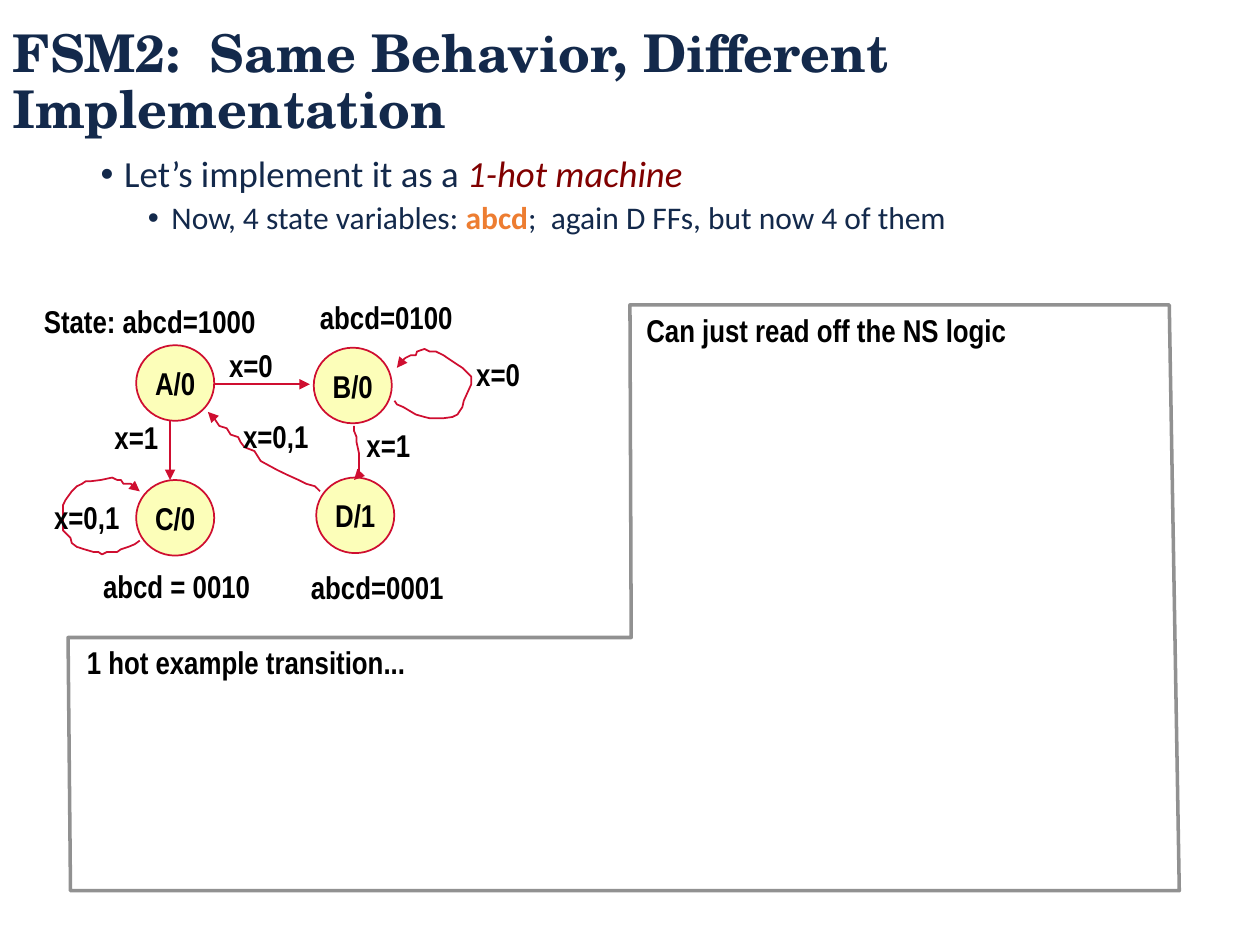
from typing import NamedTuple

from lxml import etree
from pptx import Presentation
from pptx.dml.color import RGBColor
from pptx.enum.shapes import MSO_CONNECTOR, MSO_SHAPE
from pptx.enum.text import MSO_ANCHOR, MSO_AUTO_SIZE, PP_ALIGN
from pptx.oxml.ns import qn
from pptx.util import Pt

ELLIPSE = MSO_SHAPE.OVAL
STRAIGHT = MSO_CONNECTOR.STRAIGHT
MIDDLE, TOP = MSO_ANCHOR.MIDDLE, MSO_ANCHOR.TOP
LEFT, CENTER = PP_ALIGN.LEFT, PP_ALIGN.CENTER
NO_FIT, GROW = MSO_AUTO_SIZE.NONE, MSO_AUTO_SIZE.SHAPE_TO_FIT_TEXT

NAVY, MAROON, ORANGE, BLACK = "13294B", "800000", "ED7D31", "000000"
RED, YELLOW, GREY, WHITE = "CF0E30", "FCFEB9", "919191", "FFFFFF"
DIAGRAM_FONT, BODY_FONT, TITLE_FONT = "Arial Narrow", "Calibri", "TeX Gyre Schola"
STATE_W, STATE_H = 44.6, 43.2
LABEL_H = 29

Points = list[tuple[float, float]]


class State(NamedTuple):
    text: str
    left: float
    top: float


class Label(NamedTuple):
    text: str
    left: float
    top: float
    width: float


class Bullet(NamedTuple):
    runs: list[tuple[str, str]]  # text, colour
    size: float
    indent: float
    before: float


STATES = [
    State("A/0", 77.8, 197.3),
    State("B/0", 179.3, 198.7),
    State("C/0", 77.8, 274.3),
    State("D/1", 180.7, 272.9),
]

LABELS = [
    # State codes
    Label("State: abcd=1000", 18, 169.2, 136.8),
    Label("abcd=0100", 175.7, 167, 90.7),
    Label("abcd = 0010", 51.8, 320.4, 99.4),
    Label("abcd=0001", 170.6, 321.1, 90.7),
    # Transition inputs
    Label("x=0", 265, 199.4, 39.6),
    Label("x=1", 58.3, 235.4, 39.6),
    Label("x=0", 123.8, 194.4, 39.6),
    Label("x=0,1", 23.8, 280.8, 51.8),
    Label("x=1", 202.3, 239.8, 39.6),
    Label("x=0,1", 131.8, 234.7, 51.8),
    # Headings inside the frame
    Label("Can just read off the NS logic", 362.2, 174.2, 222.5),
    Label("1 hot example transition...", 42.5, 363.6, 198),
]

BULLETS = [
    Bullet([("Let’s implement it as a ", NAVY), ("1-hot machine", MAROON)], 21, 13.5, 0),
    Bullet([("Now, 4 state variables: ", NAVY), ("abcd", ORANGE),
            (";  again D FFs, but now 4 of them", NAVY)], 18, 40.5, 3.8),
]

FRAME: Points = [(38.9, 364.3), (360.7, 364.3), (360, 174.2), (668.2, 174.2),
                 (673.9, 509), (40.3, 509)]

# Straight transitions: A to B, A to C
STRAIGHT_ARROWS = [((122.4, 219.6), (177.1, 219.6)), ((97.2, 240.5), (97.2, 274.3))]

B_TO_D: Points = [(202.3, 243.4), (202.3, 246.2), (203.8, 249.8), (203.8, 252.7),
                  (205.2, 259.2), (205.2, 274.3), (202.3, 274.3)]
B_LOOP: Points = [
    (225.4, 229), (226.8, 231.1), (230.4, 232.6), (237.6, 236.9), (242.6, 238.3),
    (245.5, 239), (253.4, 239), (258.5, 238.3), (261.4, 236.9), (264.2, 232.6),
    (265, 229), (269.3, 219.6), (269.3, 215.3), (266.4, 212.4), (264.2, 210.2),
    (259.9, 207.4), (253.4, 203), (249.1, 200.9), (245.5, 200.9), (242.6, 199.4),
    (238.3, 200.9), (237.6, 203), (234.7, 203), (231.8, 204.5), (228.2, 207.4),
    (226.8, 210.2)]
C_LOOP: Points = [
    (79.9, 308.9), (77, 311), (73.4, 312.5), (69.1, 313.9), (67, 315.4),
    (61.2, 315.4), (58.3, 316.8), (56.2, 315.4), (53.3, 315.4), (48.2, 313.9),
    (43.9, 312.5), (41, 310.3), (40.3, 307.4), (36, 303.1), (36, 288.7),
    (37.4, 285.8), (38.9, 283.7), (41, 280.8), (43.9, 277.9), (46.8, 276.5),
    (49, 275), (51.8, 275), (57.6, 274.3), (64.1, 272.9), (67, 274.3),
    (69.1, 274.3), (70.6, 276.5), (74.9, 276.5), (77, 279.4), (79.9, 280.8)]
D_TO_A: Points = [
    (182.9, 280.8), (180, 277.9), (175, 276.5), (170.6, 274.3), (164.2, 271.4),
    (158.4, 268.6), (149, 263.5), (145.4, 257.8), (139.7, 255.6), (137.5, 252.7),
    (136.1, 249.8), (131.8, 248.4), (129.6, 244.8), (125.3, 243.4), (122.4, 239),
    (120.2, 238.3), (118.8, 235.4)]


def color(hex_value: str) -> RGBColor:
    return RGBColor.from_string(hex_value)


def set_font(font, name: str, size: float, hex_value: str, bold: bool = False) -> None:
    font.name, font.size, font.bold = name, Pt(size), bold
    font.color.rgb = color(hex_value)


def set_line(line, hex_value: str, width: float, arrow: bool = False) -> None:
    line.color.rgb = color(hex_value)
    line.width = Pt(width)
    ln = line._get_or_add_ln()
    etree.SubElement(ln, qn("a:round"))
    if arrow:
        etree.SubElement(ln, qn("a:tailEnd"), type="triangle")


def draw_outline(shapes, points: Points, close: bool):
    start, *rest = [(Pt(x), Pt(y)) for x, y in points]
    builder = shapes.build_freeform(*start)
    builder.add_line_segments(rest, close=close)
    outline = builder.convert_to_shape()
    outline.shadow.inherit = False
    return outline


def draw_curve(shapes, points: Points) -> None:
    curve = draw_outline(shapes, points, close=False)
    curve.fill.background()
    set_line(curve.line, RED, 1, arrow=True)


def draw_straight(shapes, start: tuple[float, float], end: tuple[float, float]) -> None:
    arrow = shapes.add_connector(STRAIGHT, *map(Pt, start + end))
    etree.SubElement(arrow._element.spPr, qn("a:effectLst"))
    set_line(arrow.line, RED, 1, arrow=True)


def write_diagram_text(frame, text: str, align) -> None:
    frame.word_wrap = False
    paragraph = frame.paragraphs[0]
    paragraph.text = text
    paragraph.alignment = align
    set_font(paragraph.font, DIAGRAM_FONT, 18, BLACK, bold=True)


def draw_state(shapes, state: State) -> None:
    circle = shapes.add_shape(ELLIPSE, Pt(state.left), Pt(state.top), Pt(STATE_W), Pt(STATE_H))
    circle.shadow.inherit = False
    circle.fill.solid()
    circle.fill.fore_color.rgb = color(YELLOW)
    set_line(circle.line, RED, 1)
    circle.text_frame.vertical_anchor = MIDDLE
    write_diagram_text(circle.text_frame, state.text, CENTER)


def draw_label(shapes, label: Label) -> None:
    box = shapes.add_textbox(Pt(label.left), Pt(label.top), Pt(label.width), Pt(LABEL_H))
    write_diagram_text(box.text_frame, label.text, LEFT)
    box.text_frame.auto_size = GROW


def write_bullet(paragraph, bullet: Bullet) -> None:
    props = paragraph._p.get_or_add_pPr()
    props.set("marL", str(Pt(bullet.indent)))
    props.set("indent", str(Pt(-13.5)))
    paragraph.line_spacing = 0.9
    paragraph.space_before = Pt(bullet.before)
    etree.SubElement(props, qn("a:buFont"), typeface="Arial")
    etree.SubElement(props, qn("a:buChar"), char="•")
    set_font(paragraph.font, BODY_FONT, bullet.size, NAVY)
    for text, hex_value in bullet.runs:
        run = paragraph.add_run()
        run.text = text
        set_font(run.font, BODY_FONT, bullet.size, hex_value, bold=hex_value == ORANGE)
        run.font.italic = hex_value == MAROON


def main() -> None:
    prs = Presentation()
    prs.slide_width, prs.slide_height = Pt(720), Pt(540)
    slide = prs.slides.add_slide(prs.slide_layouts[5])
    shapes = slide.shapes

    # Title
    title = shapes.title
    title.left, title.top, title.width, title.height = Pt(0), Pt(18), Pt(720), Pt(60)
    title.text_frame.auto_size = NO_FIT
    title.text_frame.vertical_anchor = MIDDLE
    heading = title.text_frame.paragraphs[0]
    heading.text = "FSM2:  Same Behavior, Different Implementation"
    heading.alignment = LEFT
    heading.line_spacing = 0.9
    set_font(heading.font, TITLE_FONT, 29.7, NAVY, bold=True)

    # Bullets
    body = shapes.add_textbox(Pt(50.4), Pt(85.7), Pt(622), Pt(412.6)).text_frame
    body.word_wrap = True
    body.vertical_anchor = TOP
    for index, bullet in enumerate(BULLETS):
        write_bullet(body.add_paragraph() if index else body.paragraphs[0], bullet)

    # Work area frame
    frame = draw_outline(shapes, FRAME, close=True)
    frame.fill.solid()
    frame.fill.fore_color.rgb = color(WHITE)
    set_line(frame.line, GREY, 2)

    # State diagram
    for state in STATES:
        draw_state(shapes, state)
    for start, end in STRAIGHT_ARROWS:
        draw_straight(shapes, start, end)
    for curve in (B_TO_D, B_LOOP, C_LOOP, D_TO_A):
        draw_curve(shapes, curve)
    for label in LABELS:
        draw_label(shapes, label)

    prs.save("out.pptx")


if __name__ == "__main__":
    main()
